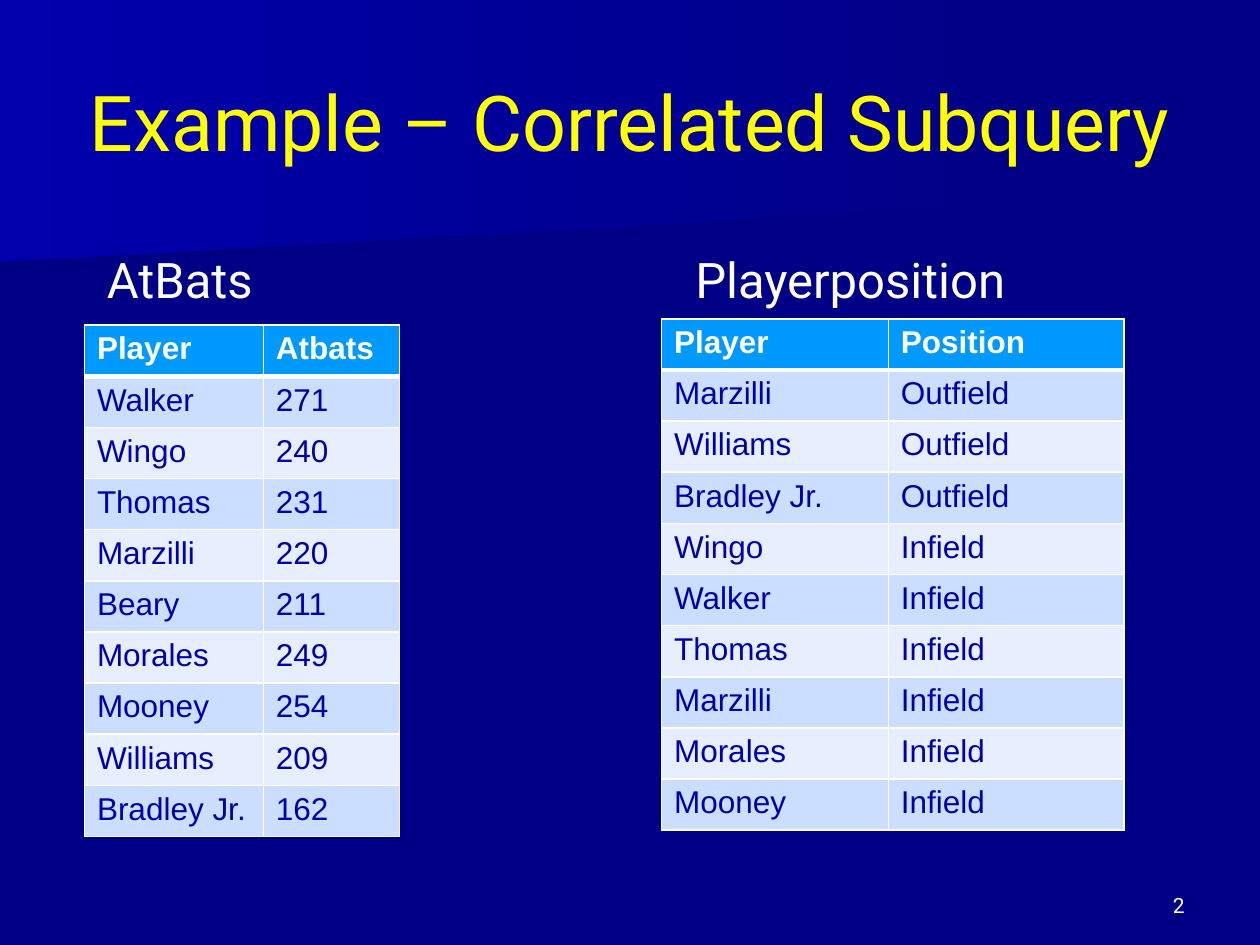
from lxml import etree
from pptx import Presentation
from pptx.dml.color import RGBColor
from pptx.enum.text import MSO_ANCHOR, PP_ALIGN
from pptx.oxml.ns import qn
from pptx.util import Inches, Pt

MIDDLE, BOTTOM = MSO_ANCHOR.MIDDLE, MSO_ANCHOR.BOTTOM
LEFT, CENTER, RIGHT = PP_ALIGN.LEFT, PP_ALIGN.CENTER, PP_ALIGN.RIGHT

WHITE = "FFFFFF"
YELLOW = "FFFF00"
NAVY = "000086"
BLUE = "0000AC"
HEADER_FILL = "0099FF"
BAND_FILLS = ("CCDEFF", "E7EFFF")
ROW_HEIGHT = 0.406

AT_BATS = [
    ("Player", "Atbats"),
    ("Walker", "271"),
    ("Wingo", "240"),
    ("Thomas", "231"),
    ("Marzilli", "220"),
    ("Beary", "211"),
    ("Morales", "249"),
    ("Mooney", "254"),
    ("Williams", "209"),
    ("Bradley Jr.", "162"),
]
POSITIONS = [
    ("Player", "Position"),
    ("Marzilli", "Outfield"),
    ("Williams", "Outfield"),
    ("Bradley Jr.", "Outfield"),
    ("Wingo", "Infield"),
    ("Walker", "Infield"),
    ("Thomas", "Infield"),
    ("Marzilli", "Infield"),
    ("Morales", "Infield"),
    ("Mooney", "Infield"),
]


def color(value):
    return RGBColor.from_string(value)


def set_font(paragraph, name, size, value, bold=False):
    paragraph.font.name = name
    paragraph.font.size = Pt(size)
    paragraph.font.bold = bold
    paragraph.font.color.rgb = color(value)


def add_band(slide, points, start_color):
    corners = [(Inches(x), Inches(y)) for x, y in points]
    builder = slide.shapes.build_freeform(*corners[0], scale=1.0)
    builder.add_line_segments(corners[1:], close=True)
    shape = builder.convert_to_shape()
    shape.shadow.inherit = False
    shape.line.fill.background()
    shape.fill.gradient()
    shape.fill.gradient_angle = 0
    for stop, value in zip(shape.fill.gradient_stops, (start_color, NAVY)):
        stop.color.rgb = color(value)


def write_text(shape, text, size, value, anchor, alignment):
    frame = shape.text_frame
    frame.word_wrap = True
    frame.vertical_anchor = anchor
    paragraph = frame.paragraphs[0]
    paragraph.text = text
    paragraph.alignment = alignment
    set_font(paragraph, "Roboto", size, value)


def place_title(slide, text):
    title = slide.shapes.title
    title.left, title.top = Inches(0.5), Inches(0.33)
    title.width, title.height = Inches(9), Inches(1.25)
    write_text(title, text, 44, YELLOW, MIDDLE, CENTER)
    title.element.getparent().append(title.element)


def add_label(slide, text, left, top, width, size, alignment=LEFT):
    box = slide.shapes.add_textbox(Inches(left), Inches(top), Inches(width), Inches(0.5))
    write_text(box, text, size, WHITE, BOTTOM, alignment)


def add_borders(cell, top, bottom):
    properties = cell._tc.get_or_add_tcPr()
    for side, width in (("L", 1), ("R", 1), ("T", top), ("B", bottom)):
        line = etree.SubElement(properties, qn(f"a:ln{side}"), w=str(Pt(width)))
        fill = etree.SubElement(line, qn("a:solidFill"))
        etree.SubElement(fill, qn("a:srgbClr"), val=WHITE)


def add_data_table(slide, rows, left, top, widths):
    frame = slide.shapes.add_table(
        len(rows), len(widths), Inches(left), Inches(top),
        Inches(sum(widths)), Inches(ROW_HEIGHT * len(rows)))
    table = frame.table
    for column, width in zip(table.columns, widths):
        column.width = Inches(width)
    for row_index, values in enumerate(rows):
        table.rows[row_index].height = Inches(ROW_HEIGHT)
        header = row_index == 0
        cell_fill = HEADER_FILL if header else BAND_FILLS[(row_index - 1) % 2]
        for column_index, value in enumerate(values):
            cell = table.cell(row_index, column_index)
            add_borders(cell, 3 if row_index == 1 else 1, 3 if header else 1)
            cell.fill.solid()
            cell.fill.fore_color.rgb = color(cell_fill)
            cell.text = value
            set_font(cell.text_frame.paragraphs[0], "Arial", 18,
                     WHITE if header else BLUE, header)


def main():
    presentation = Presentation()
    presentation.slide_width = Inches(10)
    presentation.slide_height = Inches(7.5)
    slide = presentation.slides.add_slide(presentation.slide_layouts[5])
    slide.background.fill.solid()
    slide.background.fill.fore_color.rgb = color(NAVY)

    add_band(slide, [(7.78, 1.53), (0, 2.17), (0, 1.01), (7.79, 1.01), (7.78, 1.28)], "000083")
    add_band(slide, [(7.92, 1.62), (0, 2.08), (0, 0), (7.92, 0)], BLUE)
    place_title(slide, "Example – Correlated Subquery")
    add_data_table(slide, AT_BATS, 0.67, 2.58, (1.42, 1.08))
    add_label(slide, "2", 7.17, 6.83, 2.33, 12, RIGHT)
    add_data_table(slide, POSITIONS, 5.25, 2.53, (1.8, 1.87))
    add_label(slide, "AtBats", 0.75, 2, 2.33, 28)
    add_label(slide, "Playerposition", 5.42, 2, 2.83, 28)
    presentation.save("out.pptx")


if __name__ == "__main__":
    main()
